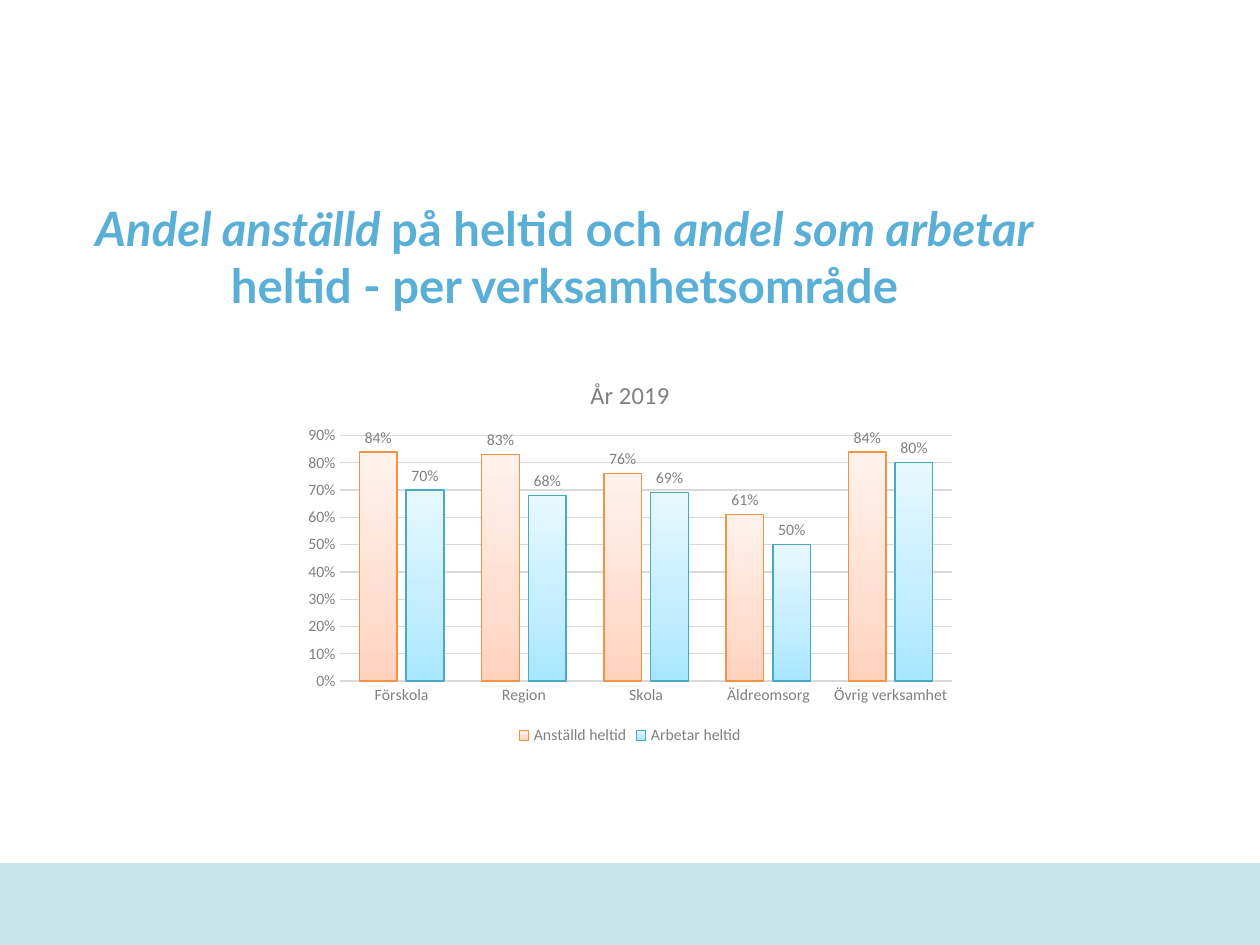
import copy

import pptx
import pptx.chart.data
import pptx.dml.color
import pptx.enum.chart
import pptx.enum.shapes
import pptx.enum.text
import pptx.oxml.ns
import pptx.util

Inches = pptx.util.Inches
Pt = pptx.util.Pt
RGB = pptx.dml.color.RGBColor.from_string


class Theme:
    title_font, chart_font = "Lato", "Calibri"
    title_size, chart_title_size, label_size = Pt(27), Pt(14), Pt(9)
    title, band = RGB("5AAFD7"), RGB("CAE5EA")
    label, grid = RGB("808080"), RGB("D9D9D9")
    line_width = Pt(0.75)


def style_font(font, size):
    font.name = Theme.chart_font
    font.size = size
    font.bold = False
    font.color.rgb = Theme.label


def style_line(line, color):
    line.color.rgb = color
    line.width = Theme.line_width


prs = pptx.Presentation()
prs.slide_width, prs.slide_height = Inches(10), Inches(7.5)
s = prs.slides.add_slide(prs.slide_layouts[5])

# Title
sp = s.shapes.title
sp.left, sp.top = Inches(0.54), Inches(1.65)
sp.width, sp.height = Inches(7.88), Inches(0.76)
tf = sp.text_frame
tf.word_wrap = True
tf.auto_size = pptx.enum.text.MSO_AUTO_SIZE.NONE
tf.vertical_anchor = pptx.enum.text.MSO_ANCHOR.MIDDLE
p = tf.paragraphs[0]
p.alignment = pptx.enum.text.PP_ALIGN.CENTER
p.font.name = Theme.title_font
p.font.size = Theme.title_size
p.font.bold = True
p.font.color.rgb = Theme.title
for text, italic in [
    ("Andel anställd ", True),
    ("på heltid och ", False),
    ("andel som arbetar", True),
    (" heltid - per verksamhetsområde", False),
]:
    r = p.add_run()
    r.text = text
    r.font.italic = italic

# Footer band
band = s.shapes.add_shape(pptx.enum.shapes.MSO_SHAPE.RECTANGLE,
                          Inches(0), Inches(6.85), Inches(10), Inches(0.65))
band.shadow.inherit = False
band.fill.solid()
band.fill.fore_color.rgb = Theme.band
band.line.fill.background()

# Chart: name, values, line colour, gradient colours
series_data = [
    ("Anställd heltid", (0.84, 0.83, 0.76, 0.61, 0.84),
     "F29344", ("FFD2BD", "FFDED0", "FFF2ED")),
    ("Arbetar heltid", (0.7, 0.68, 0.69, 0.5, 0.8),
     "49A8C2", ("A7E6FF", "C1EDFF", "E7F8FF")),
]
data = pptx.chart.data.CategoryChartData(number_format="0%")
data.categories = ["Förskola", "Region", "Skola", "Äldreomsorg", "Övrig verksamhet"]
for name, values, _, _ in series_data:
    data.add_series(name, values)
chart = s.shapes.add_chart(pptx.enum.chart.XL_CHART_TYPE.COLUMN_CLUSTERED,
                           Inches(2.34), Inches(2.85), Inches(5.32), Inches(3.1),
                           data).chart
style_font(chart.font, Theme.label_size)

# Chart title and legend
chart.has_title = True
p = chart.chart_title.text_frame.paragraphs[0]
p.text = "År 2019"
style_font(p.font, Theme.chart_title_size)
chart.chart_title.include_in_layout = False
chart.has_legend = True
chart.legend.position = pptx.enum.chart.XL_LEGEND_POSITION.BOTTOM
chart.legend.include_in_layout = False
style_font(chart.legend.font, Theme.label_size)

# Axes
cat_axis, val_axis = chart.category_axis, chart.value_axis
for axis in (cat_axis, val_axis):
    axis.major_tick_mark = pptx.enum.chart.XL_TICK_MARK.NONE
    axis.minor_tick_mark = pptx.enum.chart.XL_TICK_MARK.NONE
    style_font(axis.tick_labels.font, Theme.label_size)
style_line(cat_axis.format.line, Theme.grid)
val_axis.format.line.fill.background()
val_axis.minimum_scale, val_axis.maximum_scale, val_axis.major_unit = 0, 0.9, 0.1
val_axis.tick_labels.number_format = "0%"
val_axis.tick_labels.number_format_is_linked = False
style_line(val_axis.major_gridlines.format.line, Theme.grid)

# Columns with three-stop gradients and value labels
plot = chart.plots[0]
plot.gap_width = 100
plot.overlap = -24
plot.vary_by_categories = False
for series, (_, _, line_color, stops) in zip(plot.series, series_data):
    series.invert_if_negative = False
    fill = series.format.fill
    fill.gradient()
    fill.gradient_angle = 90
    gs_list = next(series.format._element.iter(pptx.oxml.ns.qn("a:gsLst")))
    gs_list.insert(1, copy.deepcopy(gs_list[0]))
    for stop, position, color in zip(fill.gradient_stops, (0, 0.35, 1), stops):
        stop.position = position
        stop.color.rgb = RGB(color)
    style_line(series.format.line, RGB(line_color))
    labels = series.data_labels
    labels.show_value = True
    labels.position = pptx.enum.chart.XL_LABEL_POSITION.OUTSIDE_END
    labels.number_format = "0%"
    labels.number_format_is_linked = False
    style_font(labels.font, Theme.label_size)

prs.save("out.pptx")
